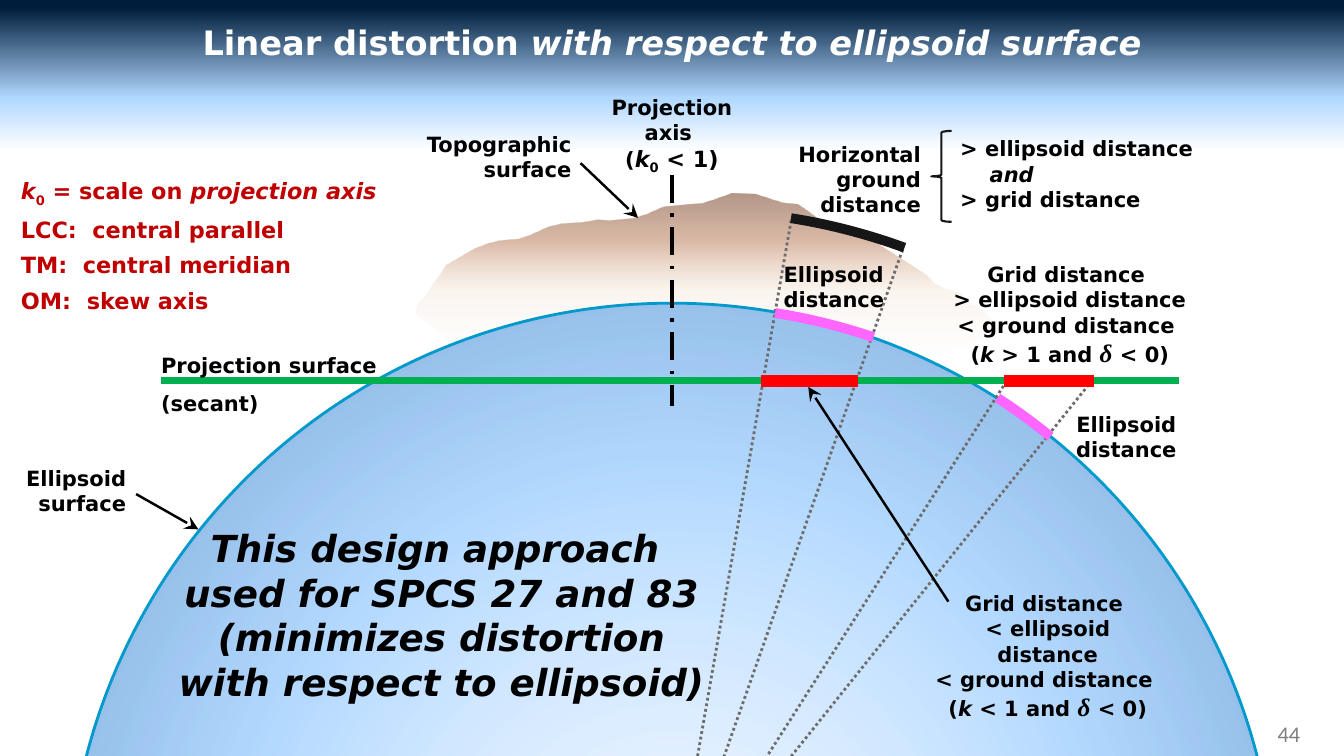
"""Build the slide on linear distortion with respect to the ellipsoid surface."""
from copy import deepcopy

from lxml.etree import SubElement
from pptx import Presentation
from pptx.dml.color import RGBColor
from pptx.enum.dml import MSO_LINE
from pptx.enum.shapes import MSO_CONNECTOR, MSO_SHAPE
from pptx.enum.text import MSO_ANCHOR, MSO_AUTO_SIZE, PP_ALIGN
from pptx.oxml.ns import qn
from pptx.util import Cm, Pt

COLORS = {
    "white": "FFFFFF", "sky": "B1D8FF", "navy": "001D3B",
    "sand": "D6B19C", "ochre": "D49E6C", "clay": "A65528", "earth": "663012",
    "pale": "C2E0FF", "azure": "47A3FF", "deep": "004C99", "rim": "0099CC",
    "ray": "6D6D6D", "green": "00B050", "red": "FF0000", "pink": "FF66FF",
    "ink": "161616", "black": "000000", "crimson": "C00000", "gray": "808080",
}
SKY_STOPS = [(80, "white", 100), (87, "sky", 100), (99, "navy", 100)]
GROUND_STOPS = [(0, "sand", 0), (40, "ochre", 10), (70, "clay", 40), (100, "earth", 50)]
ELLIPSOID_STOPS = [(0, "pale", 20), (50, "azure", 40), (100, "deep", 60)]

GROUND = [
    (11.84, 8.99), (10.48, 7.9), (10.55, 7.62), (10.74, 7.44), (10.92, 7.16), (11.13, 6.88),
    (11.25, 6.68), (11.48, 6.55), (11.96, 6.27), (12.27, 6.15), (12.57, 6.07),
    (13.08, 6.02), (13.34, 5.94), (13.56, 5.84), (13.82, 5.72), (14.15, 5.64), (14.68, 5.61),
    (15.06, 5.54), (15.37, 5.56), (15.95, 5.51), (16.28, 5.41), (16.74, 5.21),
    (17.7, 5.13), (18.01, 5.03), (18.44, 4.88), (19.05, 4.9), (19.3, 4.98),
    (19.71, 5.11), (20.12, 5.16), (20.27, 5.26), (20.68, 5.56), (20.98, 5.69),
    (21.56, 5.84), (21.79, 5.92), (21.97, 6.05), (22.76, 6.55),
    (23.32, 6.91), (23.55, 7.14), (23.77, 7.26), (24.23, 7.39), (24.38, 7.59), (24.71, 7.77),
    (25.02, 8.08), (25.15, 8.38), (23.62, 8.99),
]
RADIUS = 15.24
ELLIPSOID_CENTER = (16.93, 22.88)
RAY_HUB = (16.92, 22.83)
RAY_ENDS = [(22.76, 6.25), (19.94, 5.54), (25.4, 9.55), (27.51, 9.6)]
GRID_Y = 9.6
GRID_LINES = [(4.06, 29.72, "green", 5), (25.3, 27.56, "red", 8), (19.18, 21.62, "red", 8)]
ARCS = [
    ((17.15, 22.94), 9, 9.61, "pink"),
    ((16.84, 22.81), 33, 6.2, "pink"),
    ((17.55, 20.55), 9, 11.13, "ink"),
]
ARROWS = [
    ((3.43, 12.45), (5, 13.34)),
    ((23.9, 15.16), (20.37, 9.75)),
    ((14.63, 4.11), (16.08, 5.49)),
]
AXIS = ((16.94, 4.41), (16.94, 10.24))
BRACE = (23.47, 3.3, 0.51, 2.29)

ALIGN = {"l": PP_ALIGN.LEFT, "c": PP_ALIGN.CENTER, "r": PP_ALIGN.RIGHT}
RUN_STYLES = {
    "": {}, "i": {"italic": True}, "large": {"size": 16},
    "large i": {"size": 16, "italic": True}, "sub": {"size": 16, "baseline": "-25000"},
    "delta": {"size": 18, "italic": True, "name": "Times New Roman"},
}


def grid_label(ellipsoid, scale):
    return [[(f"Grid distance \n{ellipsoid} ellipsoid distance\n< ground distance \n(", ""),
             ("k", "i"), (f" {scale} 1 and ", ""), ("δ", "delta"), (" < 0)", "")]]


LABELS = [
    ((23.23, 14.76, 6.35, 2.95), "c", grid_label("<", "<"), {}),
    ((23.34, 6.47, 7.24, 2.95), "c", grid_label(">", ">"), {}),
    ((14.71, 2.26, 4.45, 2.24), "c",
     [[("Projection\naxis \n(", ""), ("k", "large i"), ("0", "sub"), (" < 1)", "large")]], {}),
    ((0.13, 11.61, 3.3, 1.55), "r", [[("Ellipsoid surface", "")]], {}),
    ((19.5, 6.46, 3.73, 1.55), "l", [[("Ellipsoid distance", "")]], {}),
    ((9.93, 3.18, 4.72, 1.55), "r", [[("Topographic surface", "")]], {}),
    ((19.55, 3.43, 3.91, 2.18), "r", [[("Horizontal ground distance", "")]], {}),
    ((26.52, 10.24, 3.73, 1.55), "c", [[("Ellipsoid distance", "")]], {}),
    ((23.95, 3.3, 7.37, 2.18), "l",
     [[("> ellipsoid distance", "")], [("and", "i")], [("> grid distance", "")]],
     {"indents": [0, 0.74, 0]}),
    ((4.52, 0.43, 24.84, 1.27), "c",
     [[("Linear distortion ", ""), ("with respect to ellipsoid surface", "i")]],
     {"size": 24, "color": "white"}),
    ((3.81, 8.44, 6.73, 2.06), "l", [[("Projection surface (secant)", "")]], {"spacing": 1.5}),
    ((4.06, 13.11, 14.15, 4.83), "c",
     [[("This design approach \nused for SPCS 27 and 83 (minimizes distortion "
        "with respect to ellipsoid)", "i")]], {"size": 26.6}),
    ((0.28, 4.34, 11, 3.63), "l",
     [[("k", "i"), ("0", "sub"), (" = scale on ", ""), ("projection axis", "i")],
      [("LCC:\tcentral parallel", "")], [("TM:\tcentral meridian", "")],
      [("OM:\tskew axis", "")]],
     {"size": 16, "color": "crimson", "before": 6, "tabs": [0, 1.8, 1.56, 1.66]}),
    ((25.4, 17.98, 7.62, 1.02), "r", [[("44", "")]],
     {"size": 16, "color": "gray", "name": "Calibri", "bold": False, "fixed": True}),
]


def rgb(color):
    return RGBColor.from_string(COLORS[color])


def set_gradient(fill, element, stops, circular=False):
    fill.gradient()
    gradient = element.xpath(".//a:gradFill")[0]
    for child in list(gradient):
        gradient.remove(child)
    stop_list = SubElement(gradient, qn("a:gsLst"))
    for position, color, opacity in stops:
        stop = SubElement(stop_list, qn("a:gs"), pos=str(position * 1000))
        tint = SubElement(stop, qn("a:srgbClr"), val=COLORS[color])
        if opacity < 100:
            SubElement(tint, qn("a:alpha"), val=str(opacity * 1000))
    if circular:
        route = SubElement(gradient, qn("a:path"), path="circle")
        SubElement(route, qn("a:fillToRect"), l="50000", t="50000", r="50000", b="50000")
    else:
        SubElement(gradient, qn("a:lin"), ang="16200000", scaled="0")


def set_line(line, color, width):
    line.color.rgb = rgb(color)
    line.width = Pt(width)


def add_ground(slide):
    corners = [(Cm(x), Cm(y)) for x, y in GROUND]
    builder = slide.shapes.build_freeform(*corners[0])
    builder.add_line_segments(corners[1:], close=True)
    ground = builder.convert_to_shape()
    ground.shadow.inherit = False
    ground.line.fill.background()
    set_gradient(ground.fill, ground.element, GROUND_STOPS)


def add_line(slide, start, end, color, width, dash=None, arrow=False):
    connector = slide.shapes.add_connector(
        MSO_CONNECTOR.STRAIGHT, *(Cm(value) for value in start + end))
    set_line(connector.line, color, width)
    if dash:
        connector.line.dash_style = dash
    if arrow:
        SubElement(connector.line._get_or_add_ln(), qn("a:tailEnd"),
                   type="stealth", w="lg", len="lg")
    SubElement(connector._element.spPr, qn("a:effectLst"))


def add_preset(slide, kind, box, color, width):
    shape = slide.shapes.add_shape(kind, *(Cm(value) for value in box))
    shape.shadow.inherit = False
    shape.fill.background()
    set_line(shape.line, color, width)
    return shape


def add_arc(slide, center, start, end, color, width):
    box = (center[0] - RADIUS, center[1] - RADIUS, 2 * RADIUS, 2 * RADIUS)
    arc = add_preset(slide, MSO_SHAPE.ARC, box, color, width)
    arc.adjustments[0], arc.adjustments[1] = start * 0.6, end * 0.6
    return arc


def add_run(paragraph, text, look):
    for index, piece in enumerate(text.split("\n")):
        if index:
            paragraph.add_line_break()
            paragraph._p[-1].insert(0, deepcopy(run._r.rPr))
        run = paragraph.add_run()
        run.text = piece
        run.font.name = look["name"]
        run.font.size = Pt(look["size"])
        run.font.bold = look["bold"]
        run.font.italic = look.get("italic", False)
        run.font.color.rgb = rgb(look["color"])
        if "baseline" in look:
            run._r.rPr.set("baseline", look["baseline"])


def add_label(slide, box, align, paragraphs, options):
    frame = slide.shapes.add_textbox(*(Cm(value) for value in box)).text_frame
    frame.word_wrap = True
    fixed = options.get("fixed")
    frame.auto_size = MSO_AUTO_SIZE.NONE if fixed else MSO_AUTO_SIZE.SHAPE_TO_FIT_TEXT
    frame.vertical_anchor = MSO_ANCHOR.MIDDLE if fixed else MSO_ANCHOR.TOP
    base = {"name": "DejaVu Sans", "size": 15, "bold": True, "color": "black", **options}
    for index, runs in enumerate(paragraphs):
        paragraph = frame.add_paragraph() if index else frame.paragraphs[0]
        paragraph.alignment = ALIGN[align]
        paragraph.line_spacing = options.get("spacing", 1.0)
        paragraph.space_before = Pt(options.get("before", 0) if index else 0)
        properties = paragraph._p.get_or_add_pPr()
        if "indents" in options:
            properties.set("marL", str(Cm(options["indents"][index])))
        if "tabs" in options and index:
            tabs = SubElement(properties, qn("a:tabLst"))
            SubElement(tabs, qn("a:tab"), pos=str(Cm(options["tabs"][index])), algn="l")
        for text, style in runs:
            add_run(paragraph, text, {**base, **RUN_STYLES[style]})


def main():
    presentation = Presentation()
    presentation.slide_width, presentation.slide_height = Cm(33.87), Cm(19.05)
    slide = presentation.slides.add_slide(presentation.slide_layouts[6])
    set_gradient(slide.background.fill, slide.element, SKY_STOPS)

    add_ground(slide)
    backing = add_arc(slide, ELLIPSOID_CENTER, 180, 0, "rim", 2)
    backing.fill.solid()
    backing.fill.fore_color.rgb = rgb("white")
    backing.line.fill.background()
    ellipsoid = add_arc(slide, ELLIPSOID_CENTER, 180, 0, "rim", 2)
    set_gradient(ellipsoid.fill, ellipsoid.element, ELLIPSOID_STOPS, circular=True)

    for end in RAY_ENDS:
        add_line(slide, RAY_HUB, end, "ray", 2, MSO_LINE.ROUND_DOT)
    for left, right, color, width in GRID_LINES:
        add_line(slide, (left, GRID_Y), (right, GRID_Y), color, width)
    for center, rotation, sweep, color in ARCS:
        add_arc(slide, center, 270, 270 + sweep, color, 7).rotation = rotation
    for start, end in ARROWS:
        add_line(slide, start, end, "black", 1.75, arrow=True)
    add_line(slide, *AXIS, "black", 2.5, MSO_LINE.LONG_DASH_DOT)
    add_preset(slide, MSO_SHAPE.LEFT_BRACE, BRACE, "ink", 1.5)
    for label in LABELS:
        add_label(slide, *label)
    presentation.save("out.pptx")


if __name__ == "__main__":
    main()
